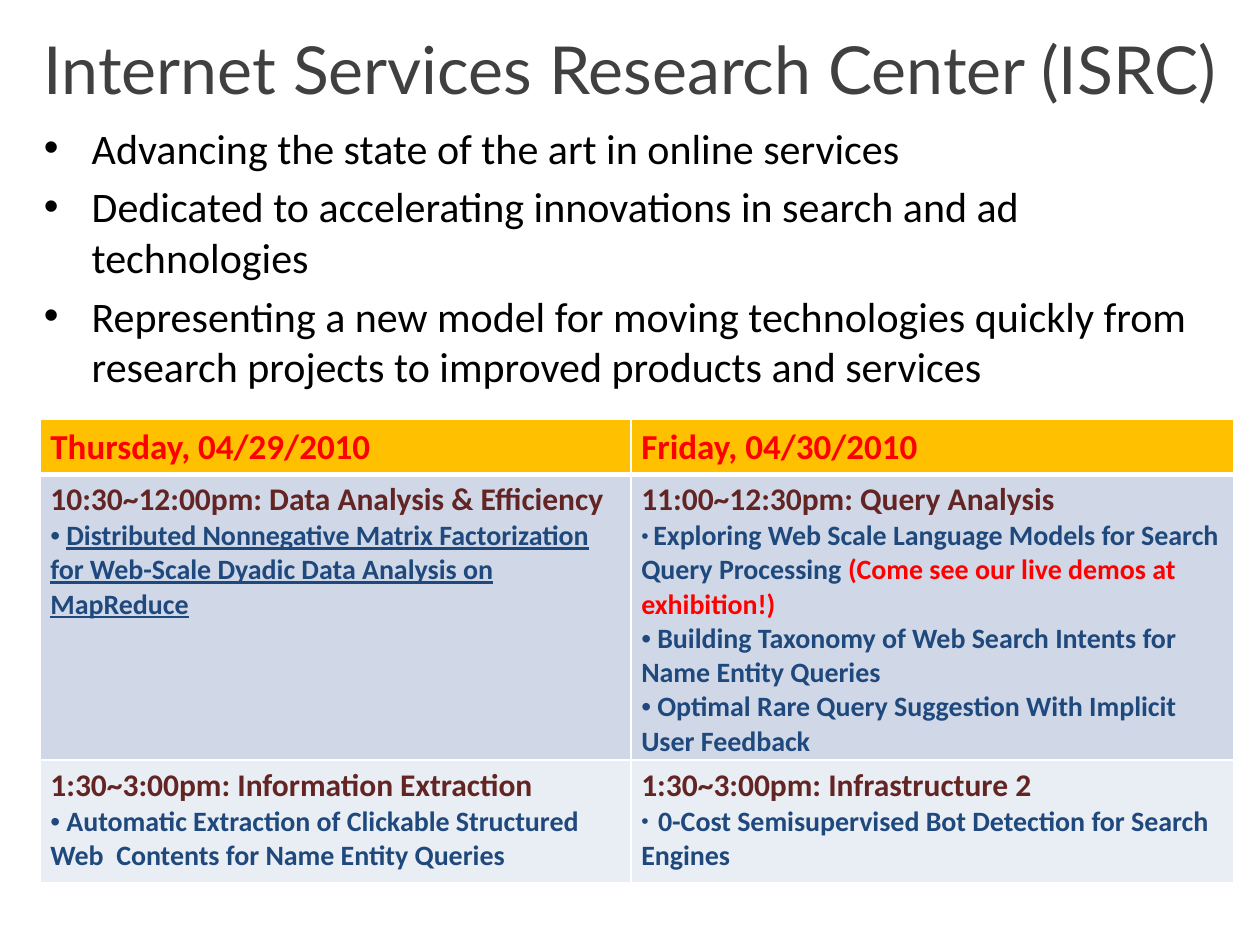
from lxml.etree import SubElement as Sub
from pptx import Presentation
from pptx.dml.color import RGBColor as RGB
from pptx.enum.text import MSO_ANCHOR as Anchor, PP_ALIGN as Align
from pptx.oxml.ns import qn
from pptx.util import Inches, Pt

COLORS = {
    "title": "404040", "black": "000000", "red": "FF0000", "brown": "632523",
    "navy": "1F497D", "gold": "FFC000", "blue": "D0D8E8", "pale": "E9EDF4",
    "white": "FFFFFF",
}


def add_text(para, text, size=16, color="navy", font="Calibri", bold=False, under=None):
    run = para.add_run()
    run.text = text
    face = run.font
    face.size, face.name, face.bold, face.underline = Pt(size), font, bold, under
    face.color.rgb = RGB.from_string(COLORS[color])


def add_bullet(para, indent=0):
    props = para._p.get_or_add_pPr()
    props.set("marL", str(Inches(indent)))
    props.set("indent", str(-Inches(indent)))
    Sub(props, qn("a:buFont"), typeface="Arial")
    Sub(props, qn("a:buChar"), char="•")


deck = Presentation()
deck.slide_width, deck.slide_height = Inches(10), Inches(7.5)
slide = deck.slides.add_slide(deck.slide_layouts[6])
shapes = slide.shapes

# Title
frame = shapes.add_textbox(Inches(0), Inches(0.08), Inches(10), Inches(0.92)).text_frame
frame.word_wrap = True
frame.vertical_anchor = Anchor.MIDDLE
para = frame.paragraphs[0]
para.alignment = Align.CENTER
add_text(para, "Internet Services Research Center (ISRC)", size=37.8, color="title", font="Lato")

# Goals
goals = [
    "Advancing the state of the art in online services",
    "Dedicated to accelerating innovations in search and ad technologies",
    "Representing a new model for moving technologies quickly from "
    "research projects to improved products and services",
]
frame = shapes.add_textbox(Inches(0.25), Inches(0.92), Inches(9.5), Inches(2.5)).text_frame
frame.word_wrap = True
for i, goal in enumerate(goals):
    para = frame.add_paragraph() if i else frame.paragraphs[0]
    para.space_before = Pt(4.8)
    add_bullet(para, indent=0.38)
    add_text(para, goal, size=24, color="black")

# Schedule: each cell has a heading, then talks made of (text, format) runs
days = [("Thursday, 04/29/2010", []), ("Friday, 04/30/2010", [])]
late = [
    ("10:30~12:00pm: Data Analysis & Efficiency", [
        [(" ", {}), ("Distributed Nonnegative Matrix Factorization for Web-Scale "
                     "Dyadic Data Analysis on MapReduce", {"under": True})],
    ]),
    ("11:00~12:30pm: Query Analysis", [
        [(" ", {"size": 12}),
         ("Exploring Web Scale Language Models for Search Query Processing ", {}),
         ("(Come see our live demos at exhibition!)", {"color": "red"})],
        [(" Building Taxonomy of Web Search Intents for Name Entity Queries", {})],
        [(" Optimal Rare Query Suggestion With Implicit User Feedback", {})],
    ]),
]
noon = [
    ("1:30~3:00pm: Information Extraction", [
        [(" Automatic Extraction of Clickable Structured Web  Contents for "
          "Name Entity Queries", {})],
    ]),
    ("1:30~3:00pm: Infrastructure 2", [
        [("  ", {"size": 12}),
         ("0-Cost Semisupervised Bot Detection for Search Engines", {})],
    ]),
]
# Row: height, fill, heading size, heading colour, cells
rows = [
    (0.43, "gold", 20, "red", days),
    (1.7, "blue", 18, "brown", late),
    (0.98, "pale", 18, "brown", noon),
]
table = shapes.add_table(3, 2, Inches(0.32), Inches(3.33), Inches(9.47), Inches(3.11)).table
for col, width in zip(table.columns, (4.69, 4.78)):
    col.width = Inches(width)

for r, (height, fill, size, color, cells) in enumerate(rows):
    table.rows[r].height = Inches(height)
    for c, (head, talks) in enumerate(cells):
        cell = table.cell(r, c)
        cell.margin_left = cell.margin_right = Inches(0.08)
        cell.margin_top = cell.margin_bottom = Inches(0.05)

        # White borders, thicker under the header
        props = cell._tc.get_or_add_tcPr()
        for side in "LRTB":
            thick = 3 if r == 0 and side == "B" else 1
            line = Sub(props, qn("a:ln" + side), w=str(Pt(thick)))
            Sub(Sub(line, qn("a:solidFill")), qn("a:srgbClr"), val=COLORS["white"])
        cell.fill.solid()
        cell.fill.fore_color.rgb = RGB.from_string(COLORS[fill])

        # Heading and talks
        frame = cell.text_frame
        add_text(frame.paragraphs[0], head, size=size, color=color, bold=True)
        for talk in talks:
            para = frame.add_paragraph()
            add_bullet(para)
            for text, style in talk:
                add_text(para, text, bold=True, **style)

deck.save("out.pptx")
